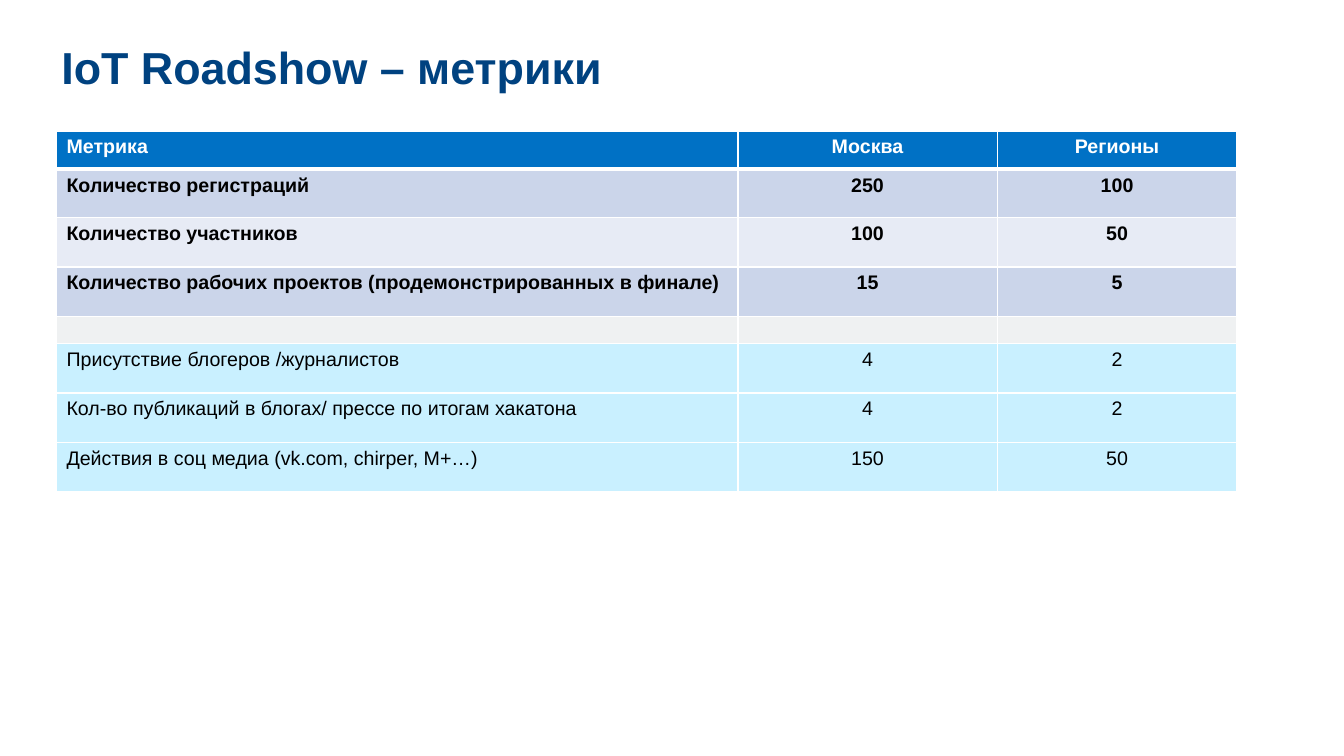
import pptx
import pptx.dml.color
import pptx.enum.text
import pptx.oxml
import pptx.oxml.ns
import pptx.util

TITLE = "IoT Roadshow – метрики"
HEADER, ODD, EVEN, GAP, MEDIA = "0071C5", "CBD5EA", "E7EBF5", "EFF1F2", "C9F0FF"
WHITE, BLACK, NAVY = "FFFFFF", "000000", "004280"
FONT = "Arial"
# (cell texts, fill, text colour, bold, row height)
ROWS = [
    (("Метрика", "Москва", "Регионы"), HEADER, WHITE, True, 0.38),
    (("Количество регистраций", "250", "100"), ODD, BLACK, True, 0.48),
    (("Количество участников", "100", "50"), EVEN, BLACK, True, 0.49),
    (("Количество рабочих проектов (продемонстрированных в финале)", "15", "5"),
     ODD, BLACK, True, 0.49),
    (("", "", ""), GAP, BLACK, False, 0.27),
    (("Присутствие блогеров /журналистов", "4", "2"), MEDIA, BLACK, False, 0.49),
    (("Кол-во публикаций в блогах/ прессе по итогам хакатона", "4", "2"),
     MEDIA, BLACK, False, 0.49),
    (("Действия в соц медиа (vk.com, chirper, M+…)", "150", "50"),
     MEDIA, BLACK, False, 0.49),
]
COLUMNS = (6.76, 2.57, 2.38)
inches = pptx.util.Inches


def rgb(value):
    return pptx.dml.color.RGBColor.from_string(value)


def add_text(para, text, size, colour, bold):
    span = para.add_run()
    span.text = text
    span.font.name, span.font.size, span.font.bold = FONT, pptx.util.Pt(size), bold
    span.font.color.rgb = rgb(colour)


def set_borders(cell, row):
    """White grid lines, with a thicker one under the header row."""
    widths = {"L": 1, "R": 1, "T": 3 if row == 1 else 1, "B": 3 if row == 0 else 1}
    for place, (side, width) in enumerate(widths.items()):
        line = pptx.oxml.parse_xml(
            f'<a:ln{side} {pptx.oxml.ns.nsdecls("a")} w="{pptx.util.Pt(width)}">'
            f'<a:solidFill><a:srgbClr val="{WHITE}"/></a:solidFill></a:ln{side}>')
        cell._tc.get_or_add_tcPr().insert(place, line)


def set_empty_size(para, size):
    """Text size of a paragraph without runs, so its row can stay low."""
    para._p.append(pptx.oxml.parse_xml(
        f'<a:endParaRPr {pptx.oxml.ns.nsdecls("a")} sz="{size * 100}"/>'))


def add_title(page):
    title = page.shapes.title
    title.left, title.top, title.width, title.height = map(inches, (0.61, 0.41, 12.01, 0.51))
    frame = title.text_frame
    frame.margin_left = frame.margin_top = frame.margin_right = frame.margin_bottom = 0
    frame.vertical_anchor = pptx.enum.text.MSO_ANCHOR.MIDDLE
    frame.auto_size = pptx.enum.text.MSO_AUTO_SIZE.NONE
    frame.word_wrap = True
    para = frame.paragraphs[0]
    para.alignment = pptx.enum.text.PP_ALIGN.LEFT
    add_text(para, TITLE, 32, NAVY, True)


def add_metrics(page):
    height = sum(row[-1] for row in ROWS)
    table = page.shapes.add_table(
        len(ROWS), len(COLUMNS), inches(0.56), inches(1.3),
        inches(sum(COLUMNS)), inches(height)).table
    for column, width in zip(table.columns, COLUMNS):
        column.width = inches(width)
    for r, (texts, fill, colour, bold, row_height) in enumerate(ROWS):
        table.rows[r].height = inches(row_height)
        for c, text in enumerate(texts):
            cell = table.cell(r, c)
            cell.fill.solid()
            cell.fill.fore_color.rgb = rgb(fill)
            set_borders(cell, r)
            para = cell.text_frame.paragraphs[0]
            if c:
                para.alignment = pptx.enum.text.PP_ALIGN.CENTER
            if text:
                add_text(para, text, 14, colour, bold)
            else:
                set_empty_size(para, 10)


def main():
    deck = pptx.Presentation()
    deck.slide_width, deck.slide_height = inches(13.33), inches(7.5)
    page = deck.slides.add_slide(deck.slide_layouts.get_by_name("Title Only"))
    add_metrics(page)
    add_title(page)
    deck.save("out.pptx")


if __name__ == "__main__":
    main()
